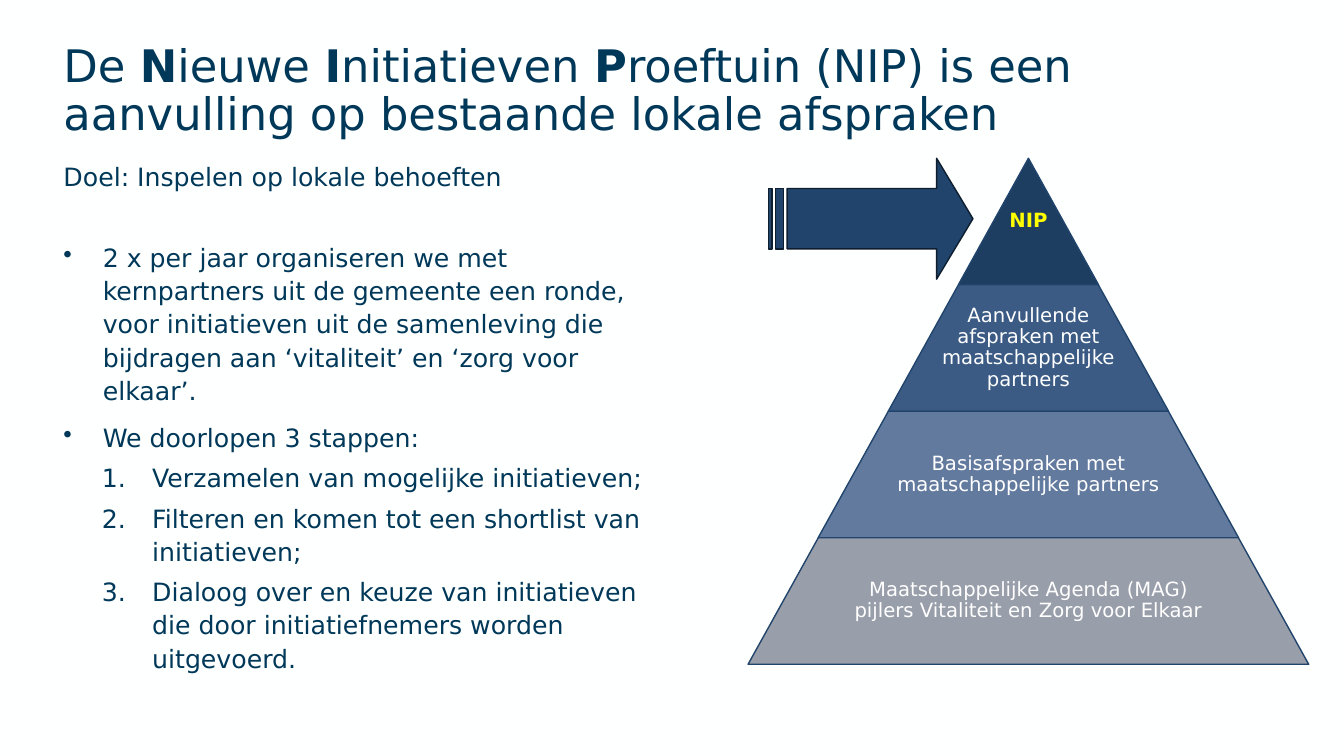
import pptx
import pptx.util
import pptx.dml.color
import pptx.enum.shapes
import pptx.enum.text
import lxml.etree

COLORS = {"background": "FEFFFF", "text": "003859", "edge": "20446B",
          "arrow_edge": "0E1E2F", "white": "FFFFFF", "yellow": "FFFF00"}
FONT = "DejaVu Sans"
TITLE = [("De ", False), ("N", True), ("ieuwe ", False), ("I", True),
         ("nitiatieven ", False), ("P", True),
         ("roeftuin (NIP) is een aanvulling op bestaande lokale afspraken", False)]
BODY = [
    ("plain", 0, "Doel: Inspelen op lokale behoeften"),
    ("bullet", 34, "2 x per jaar organiseren we met kernpartners uit de gemeente een ronde, "
     "voor initiatieven uit de samenleving die bijdragen aan ‘vitaliteit’ en ‘zorg voor elkaar’."),
    ("bullet", 10, "We doorlopen 3 stappen:"),
    ("number", 5, "Verzamelen van mogelijke initiatieven;"),
    ("number", 5, "Filteren en komen tot een shortlist van initiatieven;"),
    ("number", 5, "Dialoog over en keuze van initiatieven die door initiatiefnemers worden uitgevoerd."),
]
LIST_STYLES = {
    "bullet": (0, 39, -39, "buChar", {"char": "•"}),
    "number": (1, 88, -50, "buAutoNum", {"type": "arabicPeriod"}),
}
TIERS = [
    ("NIP", "1D3E61", 139, "yellow"),
    ("Aanvullende afspraken met maatschappelijke partners", "3B5B85", 181, "white"),
    ("Basisafspraken met maatschappelijke partners", "637A9F", 271, "white"),
    ("Maatschappelijke Agenda (MAG) pijlers Vitaliteit en Zorg voor Elkaar", "999FAA", 362, "white"),
]
PYRAMID_CENTER, PYRAMID_TOP, PYRAMID_WIDTH, PYRAMID_HEIGHT = 1020, 157, 556, 502
SLOPE = 0.555
ARROW = (762, 157, 203, 120)
PX = 9144


def px(*lengths):
    return [pptx.util.Emu(round(length * PX)) for length in lengths]


def rgb(value):
    return pptx.dml.color.RGBColor.from_string(value)


def add_frame(page, place, inset=0):
    frame = page.shapes.add_textbox(*px(*place)).text_frame
    frame.word_wrap = True
    for side in ("left", "top", "right", "bottom"):
        setattr(frame, "margin_" + side, px(inset)[0])
    return frame


def style_text(para, size, color, spacing):
    para.line_spacing = spacing
    for span in para.runs:
        span.font.name = FONT
        span.font.size = pptx.util.Pt(size)
        span.font.color.rgb = rgb(color)


def add_figure(page, kind, place, fill, edge, adjustments):
    shape = page.shapes.add_shape(kind, *px(*place))
    shape.shadow.inherit = False
    shape.fill.solid()
    shape.fill.fore_color.rgb = rgb(fill)
    shape.line.color.rgb = rgb(edge)
    shape.line.width = pptx.util.Pt(1)
    for index, value in enumerate(adjustments):
        shape.adjustments[index] = value


def add_pyramid(page):
    step = PYRAMID_HEIGHT / len(TIERS)
    for index, (label, fill, text_width, color) in enumerate(TIERS):
        top = PYRAMID_TOP + index * step
        width = PYRAMID_WIDTH * (index + 1) / len(TIERS)
        add_figure(page, pptx.enum.shapes.MSO_SHAPE.TRAPEZOID,
                   (PYRAMID_CENTER - width / 2, top, width, step),
                   fill, COLORS["edge"], [SLOPE])
        frame = add_frame(page, (PYRAMID_CENTER - text_width / 2, top, text_width, step), 2)
        frame.vertical_anchor = pptx.enum.text.MSO_ANCHOR.MIDDLE
        frame.text = label
        para = frame.paragraphs[0]
        para.alignment = pptx.enum.text.PP_ALIGN.CENTER
        style_text(para, 14, COLORS[color], 0.9)
        para.runs[0].font.bold = index == 0


def add_title(page):
    para = add_frame(page, (63, 43, 1213, 101)).paragraphs[0]
    for words, bold in TITLE:
        span = para.add_run()
        span.text = words
        span.font.bold = bold
    style_text(para, 32, COLORS["text"], 0.9)


def add_body(page):
    frame = add_frame(page, (63, 157, 604, 502))
    frame.text = "\n".join(words for _, _, words in BODY)
    for para, (kind, before, _) in zip(frame.paragraphs, BODY):
        style_text(para, 18, COLORS["text"], 1.1)
        para.space_before = pptx.util.Pt(before)
        if kind in LIST_STYLES:
            level, margin, indent, tag, attributes = LIST_STYLES[kind]
            para.level = level
            properties = para._p.get_or_add_pPr()
            properties.set("marL", str(margin * PX))
            properties.set("indent", str(indent * PX))
            lxml.etree.SubElement(properties, pptx.oxml.ns.qn("a:" + tag), attributes)


def main():
    deck = pptx.Presentation()
    deck.slide_width, deck.slide_height = px(1333, 750)
    page = deck.slides.add_slide(deck.slide_layouts[6])
    page.background.fill.solid()
    page.background.fill.fore_color.rgb = rgb(COLORS["background"])
    add_pyramid(page)
    add_title(page)
    add_body(page)
    add_figure(page, pptx.enum.shapes.MSO_SHAPE.STRIPED_RIGHT_ARROW, ARROW,
               COLORS["edge"], COLORS["arrow_edge"], [0.5, 0.3])
    deck.save("out.pptx")


if __name__ == "__main__":
    main()
